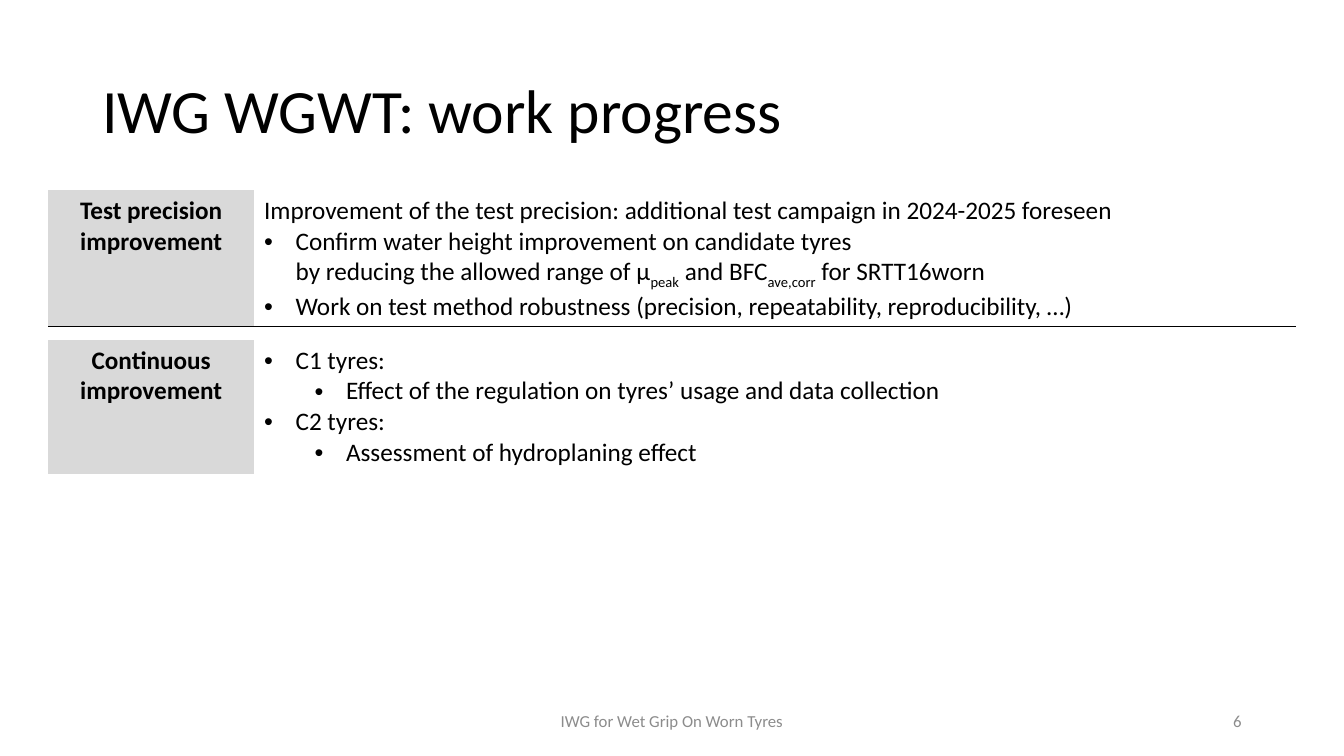
from lxml.etree import SubElement
from pptx import Presentation
from pptx.dml.color import RGBColor
from pptx.enum.text import MSO_ANCHOR, PP_ALIGN
from pptx.oxml import parse_xml
from pptx.oxml.ns import nsdecls, qn
from pptx.util import Pt

# Content: a body line is (level, runs), with None for a line without bullet;
# a run is (text, is_subscript)
TITLE = "IWG WGWT: work progress"
FOOTER = "IWG for Wet Grip On Worn Tyres"
PAGE_NUMBER = "6"
TOPICS = [
    ("Test precision improvement", [
        (None, [("Improvement of the test precision: additional test campaign "
                 "in 2024-2025 foreseen", False)]),
        (0, [("Confirm water height improvement on candidate tyres \n"
              "by reducing the allowed range of µ", False),
             ("peak", True), (" and BFC", False), ("ave,corr", True),
             (" for SRTT16worn", False)]),
        (0, [("Work on test method robustness (precision, repeatability, "
              "reproducibility, …)", False)]),
    ]),
    ("Continuous improvement", [
        (0, [("C1 tyres:", False)]),
        (1, [("Effect of the regulation on tyres’ usage and data collection", False)]),
        (0, [("C2 tyres:", False)]),
        (1, [("Assessment of hydroplaning effect", False)]),
    ]),
]

THEME = {
    "font": "Calibri",
    "text": RGBColor(0x00, 0x00, 0x00),
    "muted": RGBColor(0x8C, 0x8C, 0x8C),
    "label": RGBColor(0xD9, 0xD9, 0xD9),
    "rule": "000000",
    "title_size": 44, "body_size": 18, "footer_size": 12,
}

# Layout in points
SLIDE = (960, 540)
TITLE_BOX = (66, 28.8, 828, 104.4)
FOOTER_BOX = (318, 500.5, 324, 28.8)
NUMBER_BOX = (678, 500.5, 216, 28.8)
TABLE_LEFT, TABLE_TOP = 34.5, 136
COLUMNS = [147, 744]
ROWS = [97, 10, 95.6]
INDENT, LEVEL_STEP = 22.5, 36
NO_STYLE = "{2D5ABB26-0587-4C30-8999-92F81FD0307C}"


def add_span(para, text, size, color, bold=False, subscript=False):
    for index, line in enumerate(text.split("\n")):
        if index:
            para.add_line_break()
        span = para.add_run()
        span.text = line
        span.font.name = THEME["font"]
        span.font.size = Pt(size)
        span.font.bold = bold
        span.font.color.rgb = color
        if subscript:
            span._r.get_or_add_rPr().set("baseline", "-25000")


def add_label(page, area, text, size, color, align, spacing=1.0):
    box = page.shapes.add_textbox(*map(Pt, area))
    frame = box.text_frame
    frame.word_wrap = True
    frame.vertical_anchor = MSO_ANCHOR.MIDDLE
    para = frame.paragraphs[0]
    para.alignment = align
    para.line_spacing = spacing
    add_span(para, text, size, color)


def add_bullet(para, level):
    para.level = level
    props = para._p.get_or_add_pPr()
    props.set("marL", str(Pt(INDENT + level * LEVEL_STEP)))
    props.set("indent", str(-Pt(INDENT)))
    SubElement(props, qn("a:buFont")).set("typeface", "Arial")
    SubElement(props, qn("a:buChar")).set("char", "•")


def add_bottom_rule(cell):
    cell._tc.get_or_add_tcPr().insert(0, parse_xml(
        f'<a:lnB {nsdecls("a")} w="{Pt(1)}"><a:solidFill>'
        f'<a:srgbClr val="{THEME["rule"]}"/></a:solidFill></a:lnB>'))


def fill_topic(table, row, label, lines):
    size, color = THEME["body_size"], THEME["text"]
    label_cell, body_cell = table.cell(row, 0), table.cell(row, 1)
    label_cell.fill.solid()
    label_cell.fill.fore_color.rgb = THEME["label"]
    body_cell.fill.background()
    para = label_cell.text_frame.paragraphs[0]
    para.alignment = PP_ALIGN.CENTER
    add_span(para, label, size, color, bold=True)
    frame = body_cell.text_frame
    for index, (level, spans) in enumerate(lines):
        para = frame.add_paragraph() if index else frame.paragraphs[0]
        if level is not None:
            add_bullet(para, level)
        for text, subscript in spans:
            add_span(para, text, size, color, subscript=subscript)


def add_topics(page):
    frame = page.shapes.add_table(
        len(ROWS), len(COLUMNS), Pt(TABLE_LEFT), Pt(TABLE_TOP),
        Pt(sum(COLUMNS)), Pt(sum(ROWS)))
    table = frame.table
    table.first_row = table.horz_banding = False
    table._tbl.tblPr.find(qn("a:tableStyleId")).text = NO_STYLE
    for column, width in zip(table.columns, COLUMNS):
        column.width = Pt(width)
    for row, height in zip(table.rows, ROWS):
        row.height = Pt(height)

    # Topics take every second row
    for index, (label, lines) in enumerate(TOPICS):
        fill_topic(table, 2 * index, label, lines)

    # Thin spacer row below the ruled first topic
    for column in range(len(COLUMNS)):
        add_bottom_rule(table.cell(0, column))
        spacer = table.cell(1, column)
        spacer.fill.background()
        para = spacer.text_frame.paragraphs[0]
        SubElement(para._p, qn("a:endParaRPr")).set("sz", "200")


def main():
    deck = Presentation()
    deck.slide_width, deck.slide_height = map(Pt, SLIDE)
    page = deck.slides.add_slide(deck.slide_layouts[6])

    # Title and topics
    add_label(page, TITLE_BOX, TITLE, THEME["title_size"], THEME["text"],
              PP_ALIGN.LEFT, spacing=0.9)
    add_topics(page)

    # Footer
    for area, text, align in [(FOOTER_BOX, FOOTER, PP_ALIGN.CENTER),
                              (NUMBER_BOX, PAGE_NUMBER, PP_ALIGN.RIGHT)]:
        add_label(page, area, text, THEME["footer_size"], THEME["muted"], align)

    deck.save("out.pptx")


if __name__ == "__main__":
    main()
